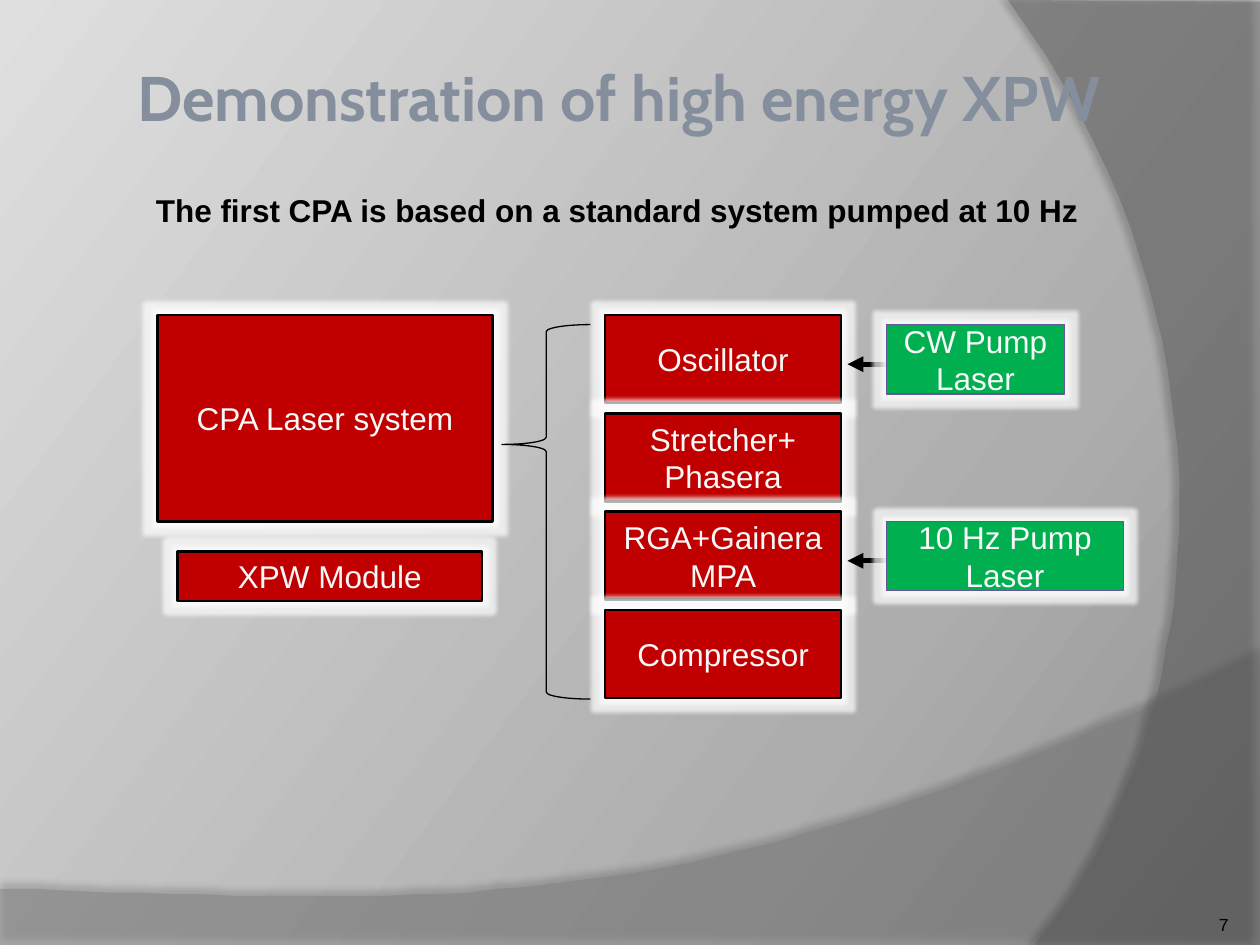
import copy
import pptx
import pptx.util
import pptx.dml.color
import pptx.enum.shapes
import pptx.enum.text
import pptx.oxml
import pptx.oxml.ns

Pt = pptx.util.Pt
qn = pptx.oxml.ns.qn
SHAPE = pptx.enum.shapes.MSO_SHAPE
ALIGN = pptx.enum.text.PP_ALIGN
ANCHOR = pptx.enum.text.MSO_ANCHOR

COLORS = {
    "bg_dark": "919191", "bg_mid": "ADADAD", "bg_light": "DFDFDF",
    "wave": "7F7F7F", "arc": "5E5E5E", "title": "848E9C",
    "stage": "C00000", "pump": "00B050", "pump_line": "625899",
    "label": "F8F8F8", "black": "000000", "glow": "FFFFFF",
}


def rgb(name):
    return pptx.dml.color.RGBColor.from_string(COLORS[name])


def xml(tag, attrs, inner=""):
    ns = pptx.oxml.ns.nsdecls("a")
    return pptx.oxml.parse_xml(f"<a:{tag} {ns} {attrs}>{inner}</a:{tag}>")


def color_xml(name, alpha):
    return f'<a:srgbClr val="{COLORS[name]}"><a:alpha val="{alpha * 1000}"/></a:srgbClr>'


def add_effect(sp, effect):
    sp.shadow.inherit = False
    sp._element.spPr.find(qn("a:effectLst")).append(effect)


def style_text(tf, size, color, align, font="Arial", bold=False):
    tf.word_wrap = True
    for p in tf.paragraphs:
        p.alignment = align
        for r in p.runs:
            r.font.size = Pt(size)
            r.font.name = font
            r.font.bold = bold
            r.font.color.rgb = rgb(color)


def curve(p0, p1, p2, p3, steps=40):
    """Points of a cubic curve after its start."""
    points = []
    for i in range(1, steps + 1):
        t = i / steps
        u = 1 - t
        points.append(tuple(u**3 * a + 3 * u * u * t * b + 3 * u * t * t * c + t**3 * d
                            for a, b, c, d in zip(p0, p1, p2, p3)))
    return points


def add_swoosh(s, points, color, alpha, shadow_alpha, direction):
    fb = s.shapes.build_freeform(*points[0], scale=Pt(1))
    fb.add_line_segments(points[1:], close=True)
    sp = fb.convert_to_shape()
    sp.fill.solid()
    sp.fill.fore_color.rgb = rgb(color)
    clr = sp._element.spPr.find(qn("a:solidFill"))[0]
    clr.append(xml("alpha", f'val="{alpha * 1000}"'))
    sp.line.fill.background()
    add_effect(sp, xml("outerShdw", f'blurRad="{Pt(4)}" dist="{Pt(4)}" dir="{direction * 60000}"',
                       color_xml("black", shadow_alpha)))


def add_backdrop(s, w, h):
    # Diagonal gradient
    fill = s.background.fill
    fill.gradient()
    stops = s._element.find(".//" + qn("a:gsLst"))
    stops.insert(1, copy.deepcopy(stops[0]))
    for stop, pos, name in zip(fill.gradient_stops, (0, 0.3, 1), ("bg_dark", "bg_mid", "bg_light")):
        stop.position = pos
        stop.color.rgb = rgb(name)
    fill.gradient_angle = 143
    # Bottom wave and right arc
    wave = [(0, 507.6), (0, h), (w, h), (w, 374.4)]
    wave += curve((w, 374.4), (402.5, 524.9), (281.5, 517.7), (0, 507.6))
    add_swoosh(s, wave, "wave", 45, 35, 270)
    arc = [(w, 1.4), (w, h), (591, h)]
    arc += curve((591, h), (673, 445.7), (733, 216), (576, 0))
    add_swoosh(s, arc, "arc", 40, 45, 180)


def add_title(s, x, y, w, h):
    sp = s.shapes.title
    sp.left, sp.top, sp.width, sp.height = Pt(x), Pt(y), Pt(w), Pt(h)
    tf = sp.text_frame
    tf.text = "Demonstration of high energy XPW"
    tf.vertical_anchor = ANCHOR.MIDDLE
    style_text(tf, 36, "title", ALIGN.CENTER, "Cabin", True)
    s.shapes._spTree.append(sp._element)  # in front of the backdrop


def add_text(s, x, y, w, h, text, size, align, bold=False):
    tf = s.shapes.add_textbox(Pt(x), Pt(y), Pt(w), Pt(h)).text_frame
    tf.text = text
    style_text(tf, size, "black", align, bold=bold)
    return tf


def add_box(s, x, y, w, h, text, fill="stage", line="black", weight=1.5):
    sp = s.shapes.add_shape(SHAPE.RECTANGLE, Pt(x), Pt(y), Pt(w), Pt(h))
    sp.fill.solid()
    sp.fill.fore_color.rgb = rgb(fill)
    sp.line.color.rgb = rgb(line)
    sp.line.width = Pt(weight)
    add_effect(sp, xml("glow", f'rad="{Pt(5)}"', color_xml("glow", 70)))
    tf = sp.text_frame
    tf.text = text
    tf.vertical_anchor = ANCHOR.MIDDLE
    style_text(tf, 18, "label", ALIGN.CENTER)


def add_arrow(s, x1, x2, y):
    cn = s.shapes.add_connector(pptx.enum.shapes.MSO_CONNECTOR.STRAIGHT, Pt(x1), Pt(y), Pt(x2), Pt(y))
    cn.line.color.rgb = rgb("black")
    cn.line.width = Pt(3)
    cn.line._get_or_add_ln().append(xml("tailEnd", 'type="triangle"'))
    cn._element.spPr.append(xml("effectLst", ""))


def add_system(s, x, y):
    add_box(s, x, y, 191.5, 118, "CPA Laser system")
    add_box(s, x + 11.5, y + 135.3, 174, 28.1, "XPW Module")


def add_stages(s, x, y, w):
    stages = ["Oscillator", "Stretcher+\nPhasera", "RGA+Gainera\nMPA", "Compressor"]
    pumps = {0: ("CW Pump Laser", 101.5), 2: ("10 Hz Pump Laser", 135.4)}
    pitch = 56.2
    pump_x = x + w + 26
    for i, name in enumerate(stages):
        add_box(s, x, y + i * pitch, w, 50.4, name)
    for i in pumps:
        add_arrow(s, pump_x, pump_x - 22.3, y + i * pitch + 28.1)
    for i, (name, width) in pumps.items():
        add_box(s, pump_x, y + i * pitch + 5.6, width, 39.6, name, "pump", "pump_line", 0.75)


def add_brace(s, x, y, w, h):
    sp = s.shapes.add_shape(SHAPE.LEFT_BRACE, Pt(x), Pt(y), Pt(w), Pt(h))
    sp.adjustments[0] = 0.08
    sp.adjustments[1] = 0.32
    sp.fill.background()
    sp.line.color.rgb = rgb("black")
    sp.line.width = Pt(0.75)
    sp.shadow.inherit = False


def add_page_number(s, x, y, w, h):
    tf = add_text(s, x, y, w, h, "7", 10, ALIGN.RIGHT)
    tf.margin_left = tf.margin_right = tf.margin_top = tf.margin_bottom = 0
    tf.vertical_anchor = ANCHOR.BOTTOM


def main():
    prs = pptx.Presentation()
    prs.slide_width, prs.slide_height = Pt(720), Pt(540)
    s = prs.slides.add_slide(prs.slide_layouts[5])
    add_backdrop(s, 720, 540)
    add_title(s, 29.5, 10, 648, 90)
    add_page_number(s, 642, 505.5, 60, 28.8)
    add_system(s, 90, 180)
    add_stages(s, 345.8, 180, 134.8)
    add_brace(s, 286.8, 185.5, 50.6, 214)
    add_text(s, 82, 105.6, 562, 29, "The first CPA is based on a standard system pumped at 10 Hz",
             18, ALIGN.LEFT, True)
    prs.save("out.pptx")


if __name__ == "__main__":
    main()
